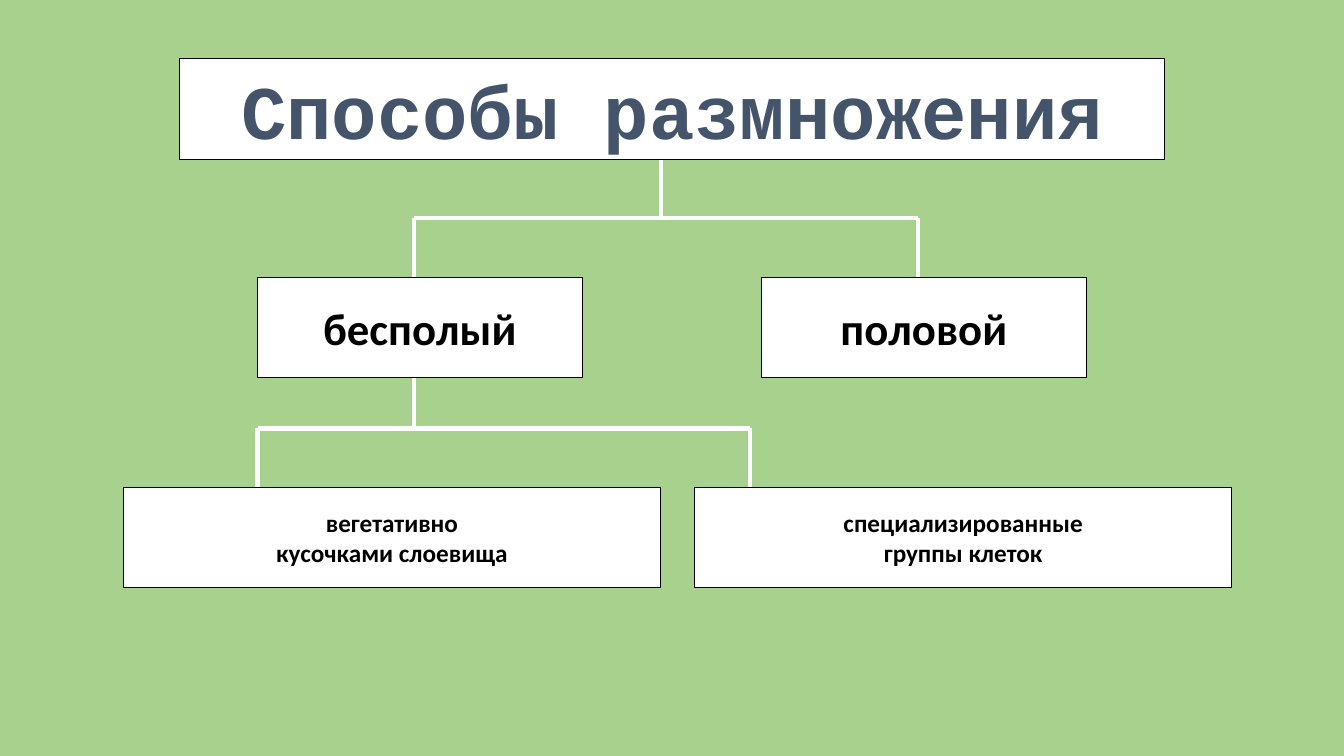
from lxml.etree import SubElement
from pptx import Presentation
from pptx.dml.color import RGBColor
from pptx.enum.shapes import MSO_CONNECTOR, MSO_SHAPE
from pptx.enum.text import MSO_ANCHOR, MSO_AUTO_SIZE, PP_ALIGN
from pptx.oxml.ns import qn
from pptx.util import Pt

COLORS = {name: RGBColor.from_string(value) for name, value in {
    "background": "A9D18E",
    "box": "FFFFFF",
    "outline": "000000",
    "branch": "FFFFFF",
    "title": "44546A",
    "text": "000000",
}.items()}
BOX_HEIGHT = 72
TITLE_TOP, KINDS_TOP, METHODS_TOP = 42, 198, 348


def format_box(shape, lines, size, font_name, color):
    shape.fill.solid()
    shape.fill.fore_color.rgb = COLORS["box"]
    shape.line.color.rgb = COLORS["outline"]
    shape.line.width = Pt(0.75)
    frame = shape.text_frame
    frame.text = "\n".join(lines)
    frame.auto_size = MSO_AUTO_SIZE.NONE
    frame.word_wrap = False
    frame.vertical_anchor = MSO_ANCHOR.MIDDLE
    for paragraph in frame.paragraphs:
        paragraph.alignment = PP_ALIGN.CENTER
        paragraph.font.size = Pt(size)
        paragraph.font.name = font_name
        paragraph.font.bold = True
        paragraph.font.color.rgb = COLORS[color]


presentation = Presentation()
presentation.slide_width, presentation.slide_height = Pt(960), Pt(540)
slide = presentation.slides.add_slide(presentation.slide_layouts[5])
slide.background.fill.solid()
slide.background.fill.fore_color.rgb = COLORS["background"]

title = slide.shapes.title
title.left, title.top = Pt(128), Pt(TITLE_TOP)
title.width, title.height = Pt(704), Pt(BOX_HEIGHT)
format_box(title, ["Способы размножения"], 54, "Courier New", "title")

boxes = [
    (184, KINDS_TOP, 232, 32, ["бесполый"]),
    (544, KINDS_TOP, 232, 32, ["половой"]),
    (88, METHODS_TOP, 384, 18, ["вегетативно", "кусочками слоевища"]),
    (496, METHODS_TOP, 384, 18, ["специализированные", "группы клеток"]),
]
for left, top, width, size, lines in boxes:
    box = slide.shapes.add_shape(
        MSO_SHAPE.RECTANGLE, Pt(left), Pt(top), Pt(width), Pt(BOX_HEIGHT))
    box.shadow.inherit = False
    format_box(box, lines, size, "Calibri", "text")

# Each fork: stem x, parent top, crossbar y, branch x positions, children top
forks = [
    (472, TITLE_TOP, 156, (296, 656), KINDS_TOP),
    (296, KINDS_TOP, 306, (184, 536), METHODS_TOP),
]
for stem, parent_top, bar, (first, last), children_top in forks:
    segments = [
        (stem, parent_top + BOX_HEIGHT, stem, bar),
        (first, bar, last, bar),
        (first, bar, first, children_top),
        (last, bar, last, children_top),
    ]
    for segment in segments:
        branch = slide.shapes.add_connector(
            MSO_CONNECTOR.STRAIGHT, *(Pt(value) for value in segment))
        branch.line.color.rgb = COLORS["branch"]
        branch.line.width = Pt(3)
        SubElement(branch._element.spPr, qn("a:effectLst"))

presentation.save("out.pptx")
